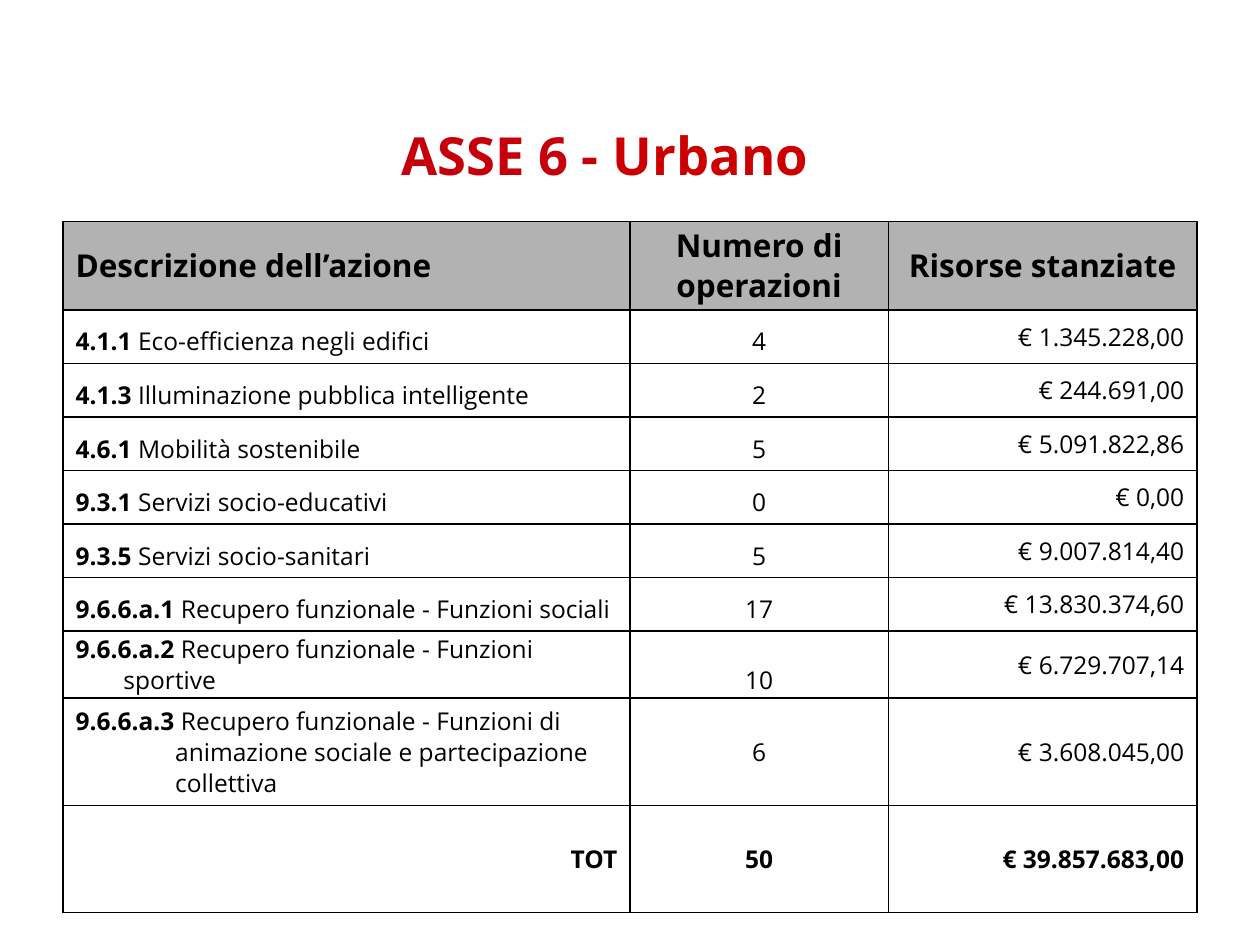
"""Build the ASSE 6 - Urbano slide with its table of actions and resources."""
from lxml.etree import SubElement
from pptx import Presentation
from pptx.dml.color import RGBColor as RGB
from pptx.enum.text import MSO_ANCHOR as ANCHOR, PP_ALIGN as ALIGN
from pptx.oxml.ns import qn
from pptx.util import Inches, Pt

COLORS = {"title": "C5000B", "accent": "CC0000", "text": "000000",
          "header": "B2B2B2", "body": "FFFFFF", "border": "000000"}
FONT = "Open Sans"
HEADER = ["Descrizione dell’azione", "Numero di operazioni", "Risorse stanziate"]
ACTIONS = [
    ("4.1.1", "Eco-efficienza negli edifici", "4", "€ 1.345.228,00"),
    ("4.1.3", "Illuminazione pubblica intelligente", "2", "€ 244.691,00"),
    ("4.6.1", "Mobilità sostenibile", "5", "€ 5.091.822,86"),
    ("9.3.1", "Servizi socio-educativi", "0", "€ 0,00"),
    ("9.3.5", "Servizi socio-sanitari", "5", "€ 9.007.814,40"),
    ("9.6.6.a.1", "Recupero funzionale - Funzioni sociali", "17", "€ 13.830.374,60"),
    ("9.6.6.a.2", "Recupero funzionale - Funzioni sportive", "10", "€ 6.729.707,14"),
    ("9.6.6.a.3", "Recupero funzionale - Funzioni di animazione sociale e "
     "partecipazione collettiva", "6", "€ 3.608.045,00"),
]
TOTAL = ["TOT", "50", "€ 39.857.683,00"]
COL_WIDTHS = [4.5, 2.05, 2.45]
ROW_HEIGHTS = [0.7] + [0.425] * 7 + [0.85] * 2


def add_run(p, text, size, bold, color="text"):
    r = p.add_run()
    r.text = text
    r.font.name, r.font.size, r.font.bold = FONT, Pt(size), bold
    r.font.color.rgb = RGB.from_string(COLORS[color])


def add_borders(cell):
    tcPr = cell._tc.get_or_add_tcPr()
    for i, side in enumerate(("a:lnL", "a:lnR", "a:lnT", "a:lnB")):
        ln = tcPr.makeelement(qn(side), {"w": str(Pt(1))})
        fill = SubElement(ln, qn("a:solidFill"))
        SubElement(fill, qn("a:srgbClr"), val=COLORS["border"])
        tcPr.insert(i, ln)


prs = Presentation()
prs.slide_width, prs.slide_height = Inches(10), Inches(7.5)
s = prs.slides.add_slide(prs.slide_layouts[5])

title = s.shapes.title
title.left, title.top = Inches(0.98), Inches(0.91)
title.width, title.height = Inches(7.64), Inches(0.66)
tf = title.text_frame
tf.word_wrap = True
tf.vertical_anchor = ANCHOR.TOP
tf.margin_left = tf.margin_right = tf.margin_top = tf.margin_bottom = 0
p = tf.paragraphs[0]
p.alignment, p.line_spacing, p.space_after = ALIGN.CENTER, 1.13, Pt(14.2)
add_run(p, "ASSE 6 - ", 30, True, "title")
add_run(p, "Urbano", 30, True, "accent")

rows = [[[(text, True)] for text in HEADER]]
for code, name, count, amount in ACTIONS:
    rows.append([[(code, True), (" " + name, False)], [(count, False)], [(amount, False)]])
rows.append([[(text, True)] for text in TOTAL])
last = len(rows) - 1

table = s.shapes.add_table(len(rows), 3, Inches(0.5), Inches(1.76),
                           Inches(sum(COL_WIDTHS)), Inches(sum(ROW_HEIGHTS))).table
table.horz_banding = False
for col, width in zip(table.columns, COL_WIDTHS):
    col.width = Inches(width)
for row, height in zip(table.rows, ROW_HEIGHTS):
    row.height = Inches(height)

for i, row in enumerate(rows):
    for j, runs in enumerate(row):
        cell = table.cell(i, j)
        cell.fill.solid()
        cell.fill.fore_color.rgb = RGB.from_string(COLORS["body" if i else "header"])
        add_borders(cell)
        cell.margin_left = cell.margin_right = Inches(0.1)
        cell.margin_top = cell.margin_bottom = Inches(0.05 if 0 < i < 7 else 0.02)
        cell.vertical_anchor = ANCHOR.BOTTOM if 0 < i < 8 and j < 2 else ANCHOR.MIDDLE
        p = cell.text_frame.paragraphs[0]
        p.line_spacing = 0.93
        p.alignment = [ALIGN.LEFT, ALIGN.CENTER, ALIGN.CENTER if i == 0 else ALIGN.RIGHT][j]
        if i == last and j == 0:
            p.alignment = ALIGN.RIGHT
        if i or j == 0:
            indent = Inches(0.79 if i >= last - 1 and j == 0 else 0.38)
            pPr = p._p.get_or_add_pPr()
            pPr.set("marL", str(indent))
            pPr.set("indent", str(-indent))
        for text, bold in runs:
            add_run(p, text, 14 if i else 18, bold)

prs.save("out.pptx")
